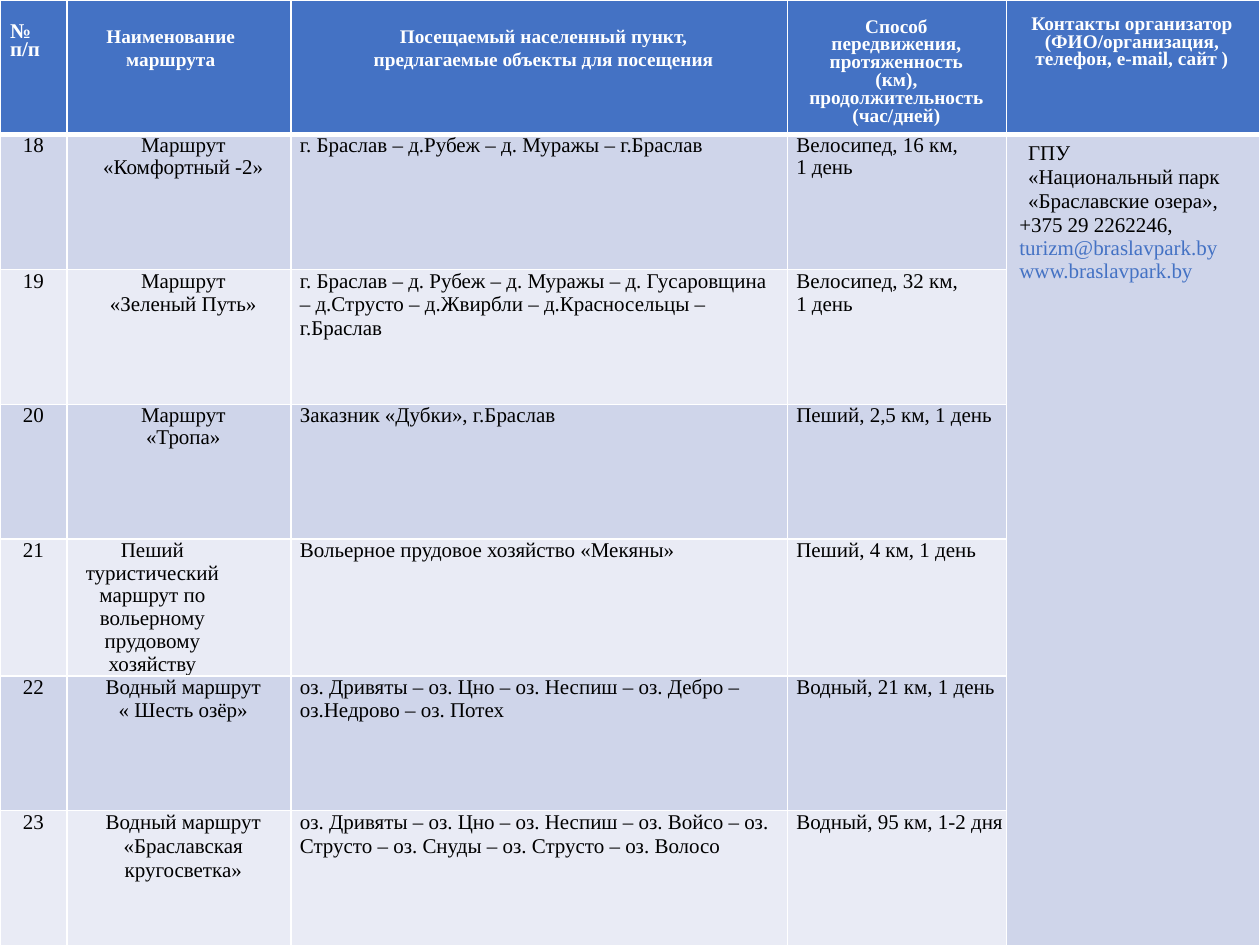
from lxml.etree import SubElement
from pptx import Presentation
from pptx.dml.color import RGBColor
from pptx.enum.text import PP_ALIGN
from pptx.oxml.ns import qn
from pptx.util import Inches, Pt

BLUE = RGBColor(0x44, 0x72, 0xC4)
WHITE = RGBColor(0xFF, 0xFF, 0xFF)
BLACK = RGBColor(0, 0, 0)
DARK = RGBColor(0xCF, 0xD5, 0xEA)
LIGHT = RGBColor(0xE9, 0xEB, 0xF5)

LEFT, MID = PP_ALIGN.LEFT, PP_ALIGN.CENTER
HEAD = {"name": "Times New Roman", "size": Pt(11), "bold": True}
BODY = {"name": "Times New Roman", "size": Pt(12), "bold": False}
WIDTHS = [0.53, 1.78, 3.94, 1.74, 2.01]
ROWS = 7

# Header: lines, size, top margin, align, left and right indent, line spacing
HEADS = [
    (["№", "п/п"], 12, 0.19, LEFT, 0.08, 0, 0.77),
    (["Наименование маршрута"], 11, 0.19, MID, 0.07, 0.2, Pt(13.4)),
    (["Посещаемый населенный пункт,",
      "предлагаемые объекты для посещения"], 11, 0.19, MID, 0.07, 0, Pt(13.4)),
    (["Способ передвижения, протяженность (км), продолжительность",
      "(час/дней)"], 11, 0.15, MID, 0.16, 0.17, 0.83),
    (["Контакты организатор (ФИО/организация, телефон, e-mail, сайт )"],
     11, 0.14, MID, 0.15, 0.17, Pt(9.9)),
]

# Routes: name lines, places, travel, line spacing, right indent of the name
ROUTES = [
    (["Маршрут «Комфортный -2»"],
     ["г. Браслав – д.Рубеж – д. Муражы – г.Браслав"],
     ["Велосипед, 16 км,", "1 день"], 12.7, 0),
    (["Маршрут", "«Зеленый Путь»"],
     ["г. Браслав – д. Рубеж – д. Муражы – д. Гусаровщина",
      "– д.Струсто – д.Жвирбли – д.Красносельцы – г.Браслав"],
     ["Велосипед, 32 км,", "1 день"], 13.4, 0),
    (["Маршрут", "«Тропа»"], ["Заказник «Дубки», г.Браслав"],
     ["Пеший, 2,5 км, 1 день"], 12.9, 0),
    (["Пеший туристический маршрут по вольерному", "прудовому хозяйству"],
     ["Вольерное прудовое хозяйство «Мекяны»"],
     ["Пеший, 4 км, 1 день"], 13, 0.49),
    (["Водный маршрут", "« Шесть озёр»"],
     ["оз. Дривяты – оз. Цно – оз. Неспиш – оз. Дебро –",
      "оз.Недрово – оз. Потех"],
     ["Водный, 21 км, 1 день"], 13.2, 0),
    (["Водный маршрут", "«Браславская кругосветка»"],
     ["оз. Дривяты – оз. Цно – оз. Неспиш – оз. Войсо – оз. Струсто"
      " – оз. Снуды – оз. Струсто – оз. Волосо"],
     ["Водный, 95 км, 1-2 дня"], 13.7, 0),
]
FIRST = 18

OWNER = ["ГПУ", "«Национальный парк", "«Браславские озера»,"]
PHONE = ["+375 29 2262246,"]
LINKS = ["turizm@braslavpark.by", "www.braslavpark.by"]


def style(item, values):
    for key, value in values.items():
        setattr(item, key, value)


def write(cell, lines, font, color, align=LEFT, left=0, right=0, space=None):
    """Add one paragraph per line, using the empty first one if it is free."""
    frame = cell.text_frame
    for line in lines:
        free = not frame.text
        para = frame.paragraphs[0] if free else frame.add_paragraph()
        props = para._p.get_or_add_pPr()
        props.set("marL", str(Inches(left)))
        props.set("marR", str(Inches(right)))
        style(para, {"alignment": align, "line_spacing": space})
        run = para.add_run()
        run.text = line
        style(run.font, font)
        run.font.color.rgb = color


def border(cell, base):
    """Draw white lines around a cell, with a given width below."""
    props = cell._tc.get_or_add_tcPr()
    for side, width in zip("LRTB", (1, 1, 1, base)):
        line = SubElement(props, qn("a:ln" + side), w=str(Pt(width)))
        fill = SubElement(line, qn("a:solidFill"))
        SubElement(fill, qn("a:srgbClr"), val=str(WHITE))


def paint(cell, color, base=1):
    border(cell, base)
    cell.fill.solid()
    cell.fill.fore_color.rgb = color
    style(cell, dict.fromkeys(
        ("margin_left", "margin_right", "margin_top", "margin_bottom"), 0))


def header(table):
    for col, (lines, size, top, align, left, right, space) in enumerate(HEADS):
        cell = table.cell(0, col)
        paint(cell, BLUE, 3)
        cell.margin_top = Inches(top)
        font = {**HEAD, "size": Pt(size)}
        write(cell, lines, font, WHITE, align, left, right, space)


def routes(table):
    for row, (name, place, travel, space, right) in enumerate(ROUTES, 1):
        parts = [
            ([str(FIRST + row - 1)], MID, 0.09, 0.09),
            (name, MID, 0.07, right),
            (place, LEFT, 0.07, 0),
            (travel, LEFT, 0.07, 0),
        ]
        for col, (lines, align, left, end) in enumerate(parts):
            cell = table.cell(row, col)
            paint(cell, DARK if row % 2 else LIGHT)
            write(cell, lines, BODY, BLACK, align, left, end, Pt(space))


def contacts(table):
    last = len(WIDTHS) - 1
    for row in range(1, ROWS):
        paint(table.cell(row, last), DARK)
    cell = table.cell(1, last)
    cell.merge(table.cell(ROWS - 1, last))
    style(cell, {"margin_left": Inches(0.1), "margin_right": Inches(0.1),
                 "margin_top": Inches(0.05), "margin_bottom": Inches(0.05)})
    write(cell, OWNER, BODY, BLACK, left=0.07, space=Pt(13.8))
    write(cell, PHONE, BODY, BLACK)
    write(cell, LINKS, BODY, BLUE)


def main():
    deck = Presentation()
    style(deck, {"slide_width": Inches(10), "slide_height": Inches(7.5)})
    slide = deck.slides.add_slide(deck.slide_layouts[6])

    # Table grid
    table = slide.shapes.add_table(ROWS, len(WIDTHS), 0, 0,
                                   Inches(10), Inches(7.5)).table
    for col, width in zip(table.columns, WIDTHS):
        col.width = Inches(width)
    for row in table.rows:
        row.height = Inches(1.07)

    # Table content
    header(table)
    routes(table)
    contacts(table)
    deck.save("out.pptx")


if __name__ == "__main__":
    main()
